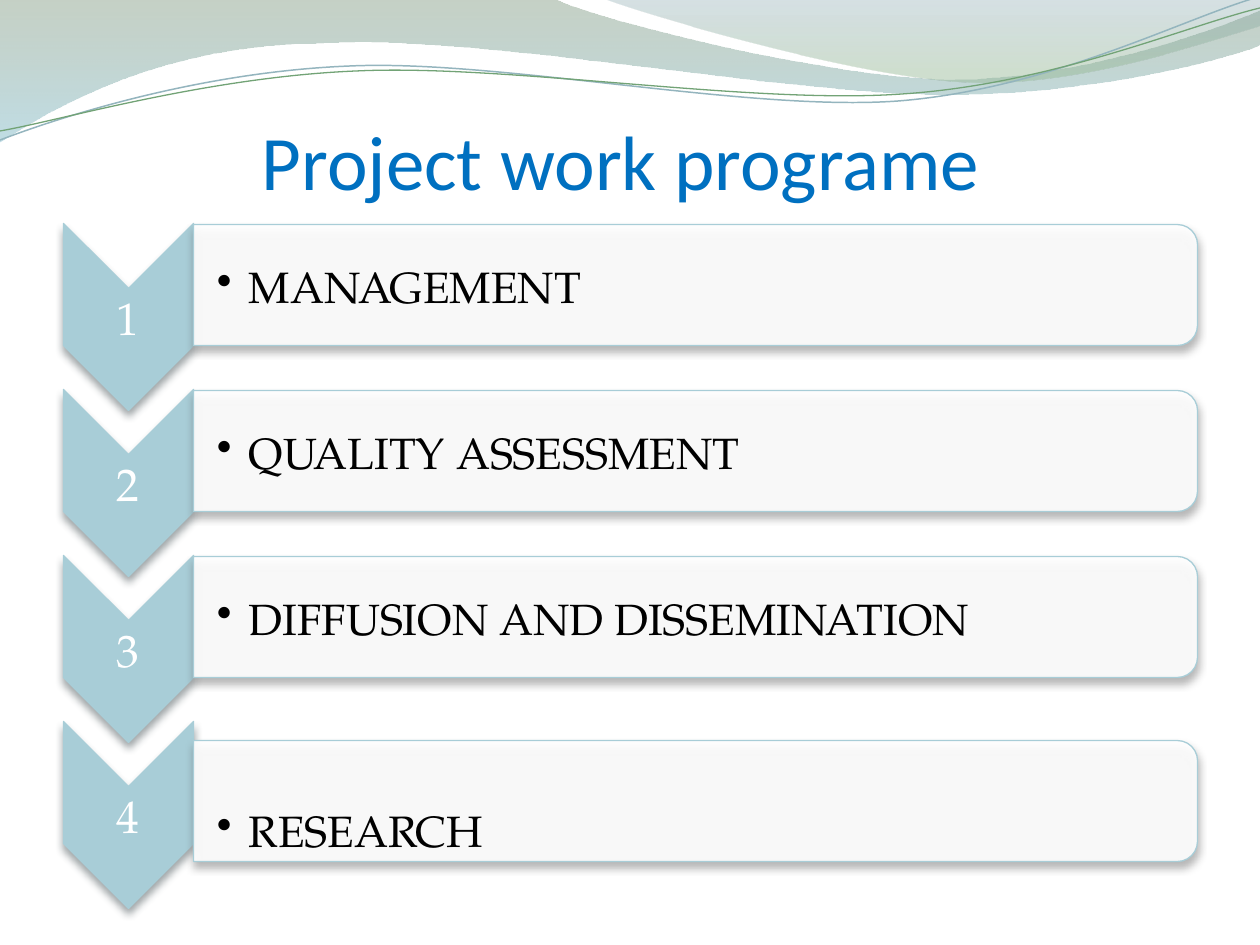
from lxml import etree
from pptx import Presentation
from pptx.dml.color import RGBColor
from pptx.enum.shapes import MSO_SHAPE as SHAPE
from pptx.enum.text import MSO_ANCHOR as ANCHOR, PP_ALIGN as ALIGN
from pptx.oxml import parse_xml
from pptx.oxml.ns import nsdecls, qn
from pptx.util import Emu, Pt

PX = 914400 / 126
SERIF = "TeX Gyre Pagella"
rgb = RGBColor.from_string


def px(*values):
    return [Emu(round(v * PX)) for v in values]


def add_text(box, text, insets, anchor, align, font, bullet=False):
    tf = s.shapes.add_textbox(*px(*box)).text_frame
    tf.word_wrap = True
    tf.vertical_anchor = anchor
    sides = ("margin_left", "margin_top", "margin_right", "margin_bottom")
    for side, value in zip(sides, px(*insets)):
        setattr(tf, side, value)
    p = tf.paragraphs[0]
    p.alignment = align
    if bullet:
        pPr = p._p.get_or_add_pPr()
        indent = px(32)[0]
        pPr.set("marL", str(indent))
        pPr.set("indent", str(-indent))
        etree.SubElement(pPr, qn("a:buChar")).set("char", "•")
    r = p.add_run()
    r.text = text
    for key, value in font.items():
        setattr(r.font, key, value)
    r.font.color.rgb = rgb(font_colors[font["size"]])


prs = Presentation()
prs.slide_width, prs.slide_height = px(1260, 945)
s = prs.slides.add_slide(prs.slide_layouts[6])

title_font = {"size": Pt(44), "name": "Calibri"}
number_font = {"size": Pt(26), "name": SERIF}
item_font = {"size": Pt(25), "name": SERIF}
font_colors = {Pt(44): "0070C0", Pt(26): "FFFFFF", Pt(25): "000000"}

# Header waves: start point, then one point per line or three per curve
waves = [
    {"start": (0, -1),
     "segments": [[(554, -1)],
                  [(600, 21), (837, 79), (955, 79)],
                  [(1075, 79), (1207, 33), (1260, 11)],
                  [(1261, 45)],
                  [(1239, 55), (1096, 96), (940, 94)],
                  [(783, 94), (481, 35), (324, 43)],
                  [(163, 44), (58, 105), (-1, 142)]],
     "stops": [(0, "809980", 45), (100, "8DC1CF", 55)]},
    {"start": (604, -1),
     "segments": [[(641, 14), (859, 78), (969, 82)],
                  [(1079, 87), (1211, 40), (1260, 26)],
                  [(1260, 0)]],
     "stops": [(0, "779BA4", 30), (80, "96B996", 45)]},
    {"start": (0, 140),
     "segments": [[(60, 117), (199, 72), (349, 66)],
                  [(498, 59), (747, 112), (898, 101)],
                  [(1050, 89), (1182, 19), (1258, -3)]],
     "line": ("94B5BE", 0.85)},
    {"start": (0, 131),
     "segments": [[(59, 121), (207, 77), (357, 71)],
                  [(508, 64), (752, 105), (903, 94)],
                  [(1053, 84), (1186, 26), (1260, 8)]],
     "line": ("72A376", 0.75)},
]
for wave in waves:
    builder = s.shapes.build_freeform(*wave["start"], scale=PX)
    points = [pt for segment in wave["segments"] for pt in segment]
    builder.add_line_segments(points, close="stops" in wave)
    sp = builder.convert_to_shape()
    sp.shadow.inherit = False

    # Turn each group of three line points into one Bezier segment
    lines = iter(list(sp._element.iter(qn("a:lnTo"))))
    for segment in wave["segments"]:
        first, *rest = [next(lines) for _ in segment]
        if rest:
            first.tag = qn("a:cubicBezTo")
            for line in rest:
                first.append(line[0])
                line.getparent().remove(line)

    if "stops" in wave:
        sp.line.fill.background()
        sp.fill.solid()
        stops = "".join(
            f'<a:gs pos="{pos * 1000}"><a:srgbClr val="{color}">'
            f'<a:alpha val="{alpha * 1000}"/></a:srgbClr></a:gs>'
            for pos, color, alpha in wave["stops"])
        spPr = sp._element.spPr
        spPr.replace(spPr.find(qn("a:solidFill")), parse_xml(
            f'<a:gradFill {nsdecls("a")} rotWithShape="1"><a:gsLst>{stops}'
            '</a:gsLst><a:lin ang="5400000" scaled="0"/></a:gradFill>'))
    else:
        color, width = wave["line"]
        sp.fill.background()
        sp.line.color.rgb = rgb(color)
        sp.line.width = Pt(width)

# Title
add_text((54, 66, 1134, 140), "Project work programe", (0, 6, 0, 0),
         ANCHOR.BOTTOM, ALIGN.CENTER, title_font)

# Work packages: numbered chevron and bar, with the last bar set lower
STEP = 166
items = [("MANAGEMENT", 0, 2), ("QUALITY ASSESSMENT", 0, 2),
         ("DIFFUSION AND DISSEMINATION", 0, 2), ("RESEARCH", 18, 58)]
for i, (item, drop, top_inset) in enumerate(items):
    y = i * STEP
    parts = [
        (SHAPE.CHEVRON, (35, 252 + y, 187, 130), "A8CDD7", 100, "3B484C"),
        (SHAPE.ROUND_2_SAME_RECTANGLE, (635, y + drop - 217, 121, 1004),
         "FFFFFF", 90, "5A5A5A"),
    ]
    for kind, box, fill, alpha, shade in parts:
        sp = s.shapes.add_shape(kind, *px(*box))
        sp.rotation = 90
        sp.fill.solid()
        sp.fill.fore_color.rgb = rgb(fill)
        sp.line.color.rgb = rgb("A8CDD7")
        sp.line.width = Pt(0.75)
        sp.shadow.inherit = False
        spPr = sp._element.spPr
        if alpha < 100:
            clr = spPr.find(qn("a:solidFill"))[0]
            etree.SubElement(clr, qn("a:alpha")).set("val", str(alpha * 1000))
        spPr.find(qn("a:effectLst")).append(parse_xml(
            f'<a:outerShdw {nsdecls("a")} blurRad="{Pt(4.5)}" dist="{Pt(3)}" '
            f'dir="5400000" rotWithShape="0"><a:srgbClr val="{shade}">'
            '<a:alpha val="48000"/></a:srgbClr></a:outerShdw>'))
    add_text((63, 290 + y, 130, 55), str(i + 1), (2, 2, 2, 2),
             ANCHOR.MIDDLE, ALIGN.CENTER, number_font)
    add_text((193, 231 + y + drop, 998, 110), item, (24, top_inset, 2, 2),
             ANCHOR.MIDDLE, ALIGN.LEFT, item_font, bullet=True)

prs.save("out.pptx")
